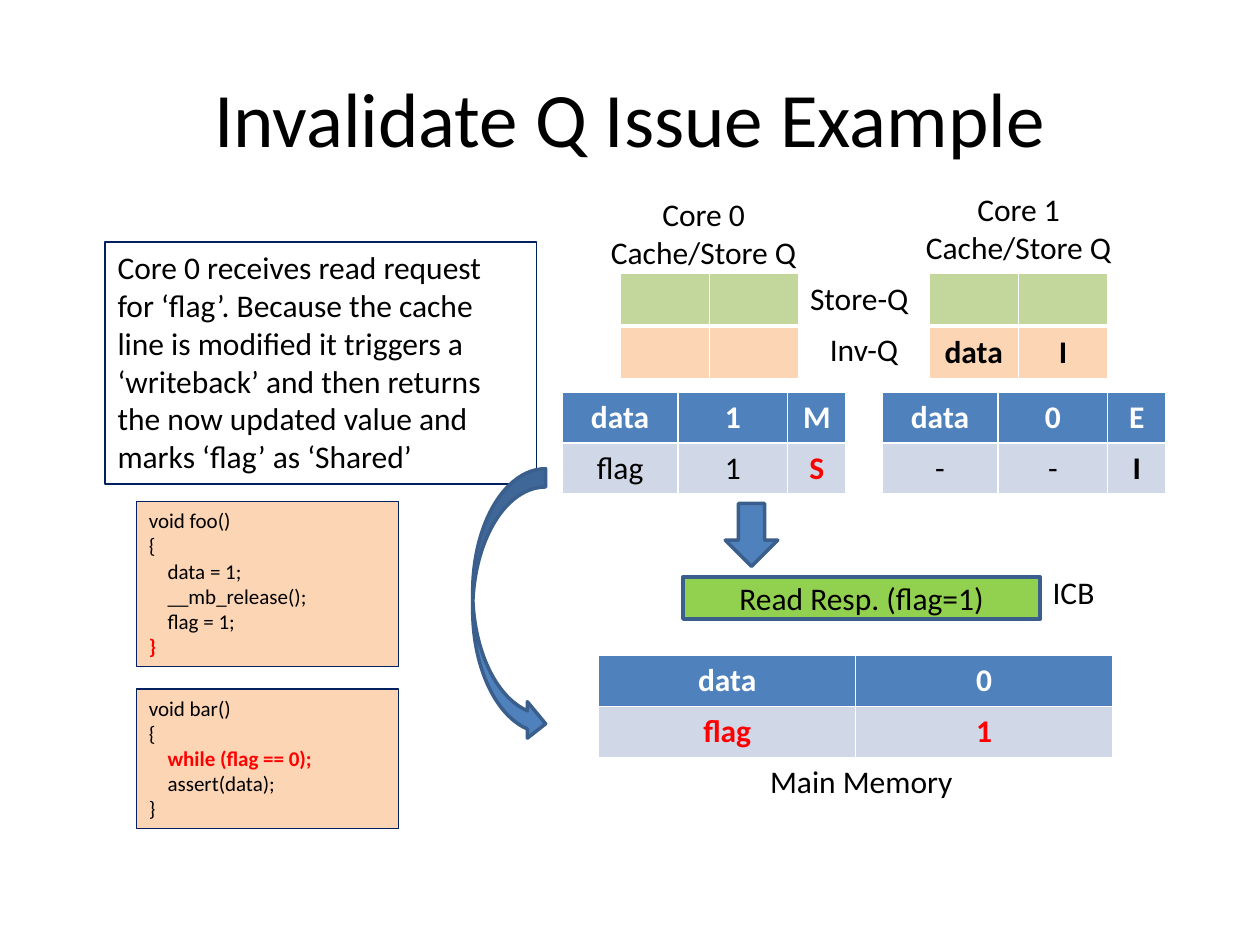
from lxml import etree
from pptx import Presentation
from pptx import util as u
from pptx.dml.color import RGBColor
from pptx.enum import shapes, text

COLORS = {
    "black": "000000", "white": "FFFFFF", "red": "FF0000", "navy": "002060",
    "blue": "4F81BD", "edge": "3A5F8C", "pale": "D0D8E8",
    "green": "C3D69B", "peach": "FCD5B5", "lime": "92D050",
}
FONT = "Calibri"
CENTER = text.PP_ALIGN.CENTER
LEFT = text.PP_ALIGN.LEFT
ROW_HEIGHT = 1.03
CACHE_COLUMNS = (2.34, 2.21, 1.17)
QUEUE_COLUMNS = (1.8, 1.8)
MEMORY_COLUMNS = (5.18, 5.18)


def color(name):
    return RGBColor.from_string(COLORS[name])


def style(para, size=18, ink="black", bold=False, align=LEFT):
    para.alignment = align
    font = para.font
    font.name, font.size, font.bold = FONT, u.Pt(size), bold
    font.color.rgb = color(ink)


def add_label(page, box, lines, align=CENTER, wrap=True):
    label = page.shapes.add_textbox(*map(u.Cm, box))
    frame = label.text_frame
    frame.word_wrap = wrap
    frame.text = lines
    style(frame.paragraphs[0], align=align)


def add_block(page, kind, box, fill=None, line="edge", width=2):
    block = page.shapes.add_shape(kind, *map(u.Cm, box))
    block.shadow.inherit = False
    if fill:
        block.fill.solid()
        block.fill.fore_color.rgb = color(fill)
    else:
        block.fill.background()
    block.line.color.rgb = color(line)
    block.line.width = u.Pt(width)
    return block


def add_grid(page, left, top, columns, rows):
    """Each row is (fill, cells); each cell is (text, ink, bold)."""
    frame = page.shapes.add_table(len(rows), len(columns), u.Cm(left), u.Cm(top),
                                  u.Cm(sum(columns)), u.Cm(ROW_HEIGHT * len(rows)))
    table = frame.table
    for column, width in zip(table.columns, columns):
        column.width = u.Cm(width)
    for r, (fill, cells) in enumerate(rows):
        for c, (words, ink, bold) in enumerate(cells):
            cell = table.cell(r, c)
            cell.fill.solid()
            cell.fill.fore_color.rgb = color(fill)
            cell.text = words
            style(cell.text_frame.paragraphs[0], ink=ink, bold=bold, align=CENTER)


def row(fill, words, ink="black", bold=False):
    return fill, [(word, ink, bold) for word in words]


def header(words):
    return row("blue", words, "white", True)


def add_core(page, box, name, label_at, queue_left, invalidations, cache):
    """Label, store queue, invalidate queue and cache, offset from the box corner."""
    left, top = box
    label_left, label_top = label_at
    add_label(page, (left + label_left, top + label_top, 4.65, 1.8),
              f"{name} Cache/Store Q")
    queues = [row("green", ("", "")), row("peach", invalidations, bold=True)]
    for i, queue in enumerate(queues):
        add_grid(page, left + queue_left, top + 1.8 + i * 1.09, QUEUE_COLUMNS, [queue])
    add_grid(page, left, top + 4.19, CACHE_COLUMNS, cache)


def add_bus(page, left, top):
    message = add_block(page, shapes.MSO_SHAPE.RECTANGLE, (left, top, 7.2, 0.85), "lime")
    frame = message.text_frame
    frame.text = "Read Resp. (flag=1)"
    frame.vertical_anchor = text.MSO_ANCHOR.MIDDLE
    style(frame.paragraphs[0], align=CENTER)
    add_label(page, (left + 7.2, top - 0.2, 1.37, 1.02), "ICB", LEFT, False)
    add_block(page, shapes.MSO_SHAPE.DOWN_ARROW, (left + 0.85, top - 1.48, 1.06, 1.27), "blue")


def add_memory(page, left, top):
    add_grid(page, left, top, MEMORY_COLUMNS,
             [header(("data", "0")), row("pale", ("flag", "1"), "red", True)])
    add_label(page, (left + 2.22, top + 2.03, 6.15, 1.02), "Main Memory")


def add_panel(page, box, lines, size, fill=None, active=None):
    """Bordered left-aligned text; lines are (indent level, text)."""
    panel = add_block(page, shapes.MSO_SHAPE.RECTANGLE, box, fill, "navy", 0.75)
    frame = panel.text_frame
    frame.word_wrap = True
    frame.vertical_anchor = text.MSO_ANCHOR.TOP
    for i, (level, words) in enumerate(lines):
        para = frame.paragraphs[0] if i == 0 else frame.add_paragraph()
        para.text = words
        current = i == active
        style(para, size, "red" if current else "black", current)
        if level:
            para._p.get_or_add_pPr().set("marL", str(u.Cm(0.38 * level)))


def main():
    deck = Presentation()
    deck.slide_width, deck.slide_height = u.Cm(25.4), u.Cm(19.05)
    page = deck.slides.add_slide(deck.slide_layouts[5])

    title = page.shapes.title
    title.left, title.top, title.width, title.height = map(u.Cm, (1.27, 0.76, 22.86, 3.18))
    title.text = "Invalidate Q Issue Example"
    style(title.text_frame.paragraphs[0], 44, align=CENTER)

    add_memory(page, 12.07, 13.21)
    add_bus(page, 13.77, 11.63)
    add_panel(page, (2.12, 4.88, 8.69, 4.88), [(0, (
        "Core 0 receives read request for ‘flag’. Because the cache line is modified "
        "it triggers a ‘writeback’ and then returns the now updated value and marks "
        "‘flag’ as ‘Shared’"))], 18)

    shared = ("pale", [("flag", "black", False), ("1", "black", False), ("S", "red", True)])
    invalid = ("pale", [("-", "black", False), ("-", "black", False), ("I", "black", True)])
    add_core(page, (11.33, 3.71), "Core 0", (0.53, 0.1), 1.17, ("", ""),
             [header(("data", "1", "M")), shared])
    add_core(page, (17.78, 3.71), "Core 1", (0.43, 0), 0.95, ("data", "I"),
             [header(("data", "0", "E")), invalid])
    add_label(page, (16.08, 5.51, 2.51, 1.02), "Store-Q", LEFT, False)
    add_label(page, (16.48, 6.53, 1.93, 1.02), "Inv-Q", LEFT, False)

    add_block(page, shapes.MSO_SHAPE.CURVED_RIGHT_ARROW, (9.53, 9.45, 1.47, 5.51), "blue")
    add_panel(page, (2.75, 10.11, 5.29, 3.33), [
        (0, "void foo()"), (0, "{"), (1, "data = 1;"), (1, "__mb_release();"),
        (1, "flag = 1;"), (0, "}")], 12, "peach", active=5)
    add_panel(page, (2.75, 13.89, 5.29, 2.82), [
        (0, "void bar()"), (0, "{"), (1, "while (flag == 0);"),
        (1, "assert(data);"), (0, "}")], 12, "peach", active=2)

    deck.save("out.pptx")


if __name__ == "__main__":
    main()
